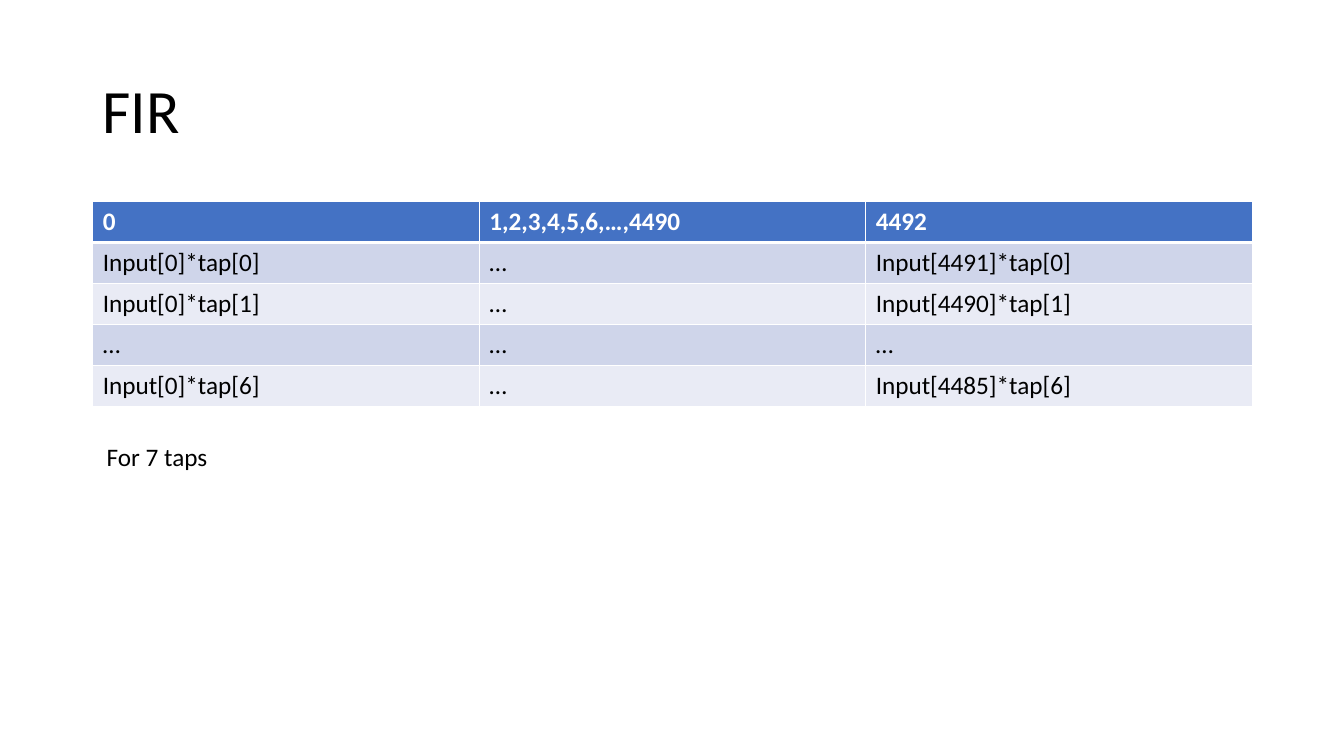
from dataclasses import dataclass

from lxml.etree import SubElement
from pptx import Presentation
from pptx.dml.color import RGBColor as RGB
from pptx.enum.text import MSO_ANCHOR as Anchor
from pptx.oxml.ns import qn
from pptx.util import Inches, Pt


@dataclass(frozen=True)
class Theme:
    font: str = "Calibri"
    title_size: int = 44
    body_size: int = 18
    ink: str = "000000"
    white: str = "FFFFFF"
    header: str = "4472C4"
    bands: tuple = ("CFD5EA", "E9EBF5")
    grid_line: int = 1
    header_line: int = 3


THEME = Theme()


def style_text(frame, size, color, bold=False):
    for paragraph in frame.paragraphs:
        for run in paragraph.runs:
            run.font.name = THEME.font
            run.font.size = Pt(size)
            run.font.bold = bold
            run.font.color.rgb = RGB.from_string(color)


def add_border(cell, side, points):
    """Draw one white cell edge; side is L, R, T or B."""
    line = SubElement(cell._tc.get_or_add_tcPr(), qn(f"a:ln{side}"), w=str(Pt(points)))
    fill = SubElement(line, qn("a:solidFill"))
    SubElement(fill, qn("a:srgbClr"), val=THEME.white)


prs = Presentation()
prs.slide_width = Inches(13.33)
prs.slide_height = Inches(7.5)
slide = prs.slides.add_slide(prs.slide_layouts[6])

title = slide.shapes.add_textbox(
    Inches(0.92), Inches(0.4), Inches(11.5), Inches(1.45)
).text_frame
title.word_wrap = True
title.vertical_anchor = Anchor.MIDDLE
title.text = "FIR"
title.paragraphs[0].line_spacing = 0.9
style_text(title, THEME.title_size, THEME.ink)

fir_rows = [
    ("0", "1,2,3,4,5,6,…,4490", "4492"),
    ("Input[0]*tap[0]", "…", "Input[4491]*tap[0]"),
    ("Input[0]*tap[1]", "…", "Input[4490]*tap[1]"),
    ("…", "…", "…"),
    ("Input[0]*tap[6]", "…", "Input[4485]*tap[6]"),
]
fir_table = slide.shapes.add_table(
    len(fir_rows), len(fir_rows[0]),
    Inches(0.92), Inches(2), Inches(11.5), Inches(2.03),
).table

for row, values in enumerate(fir_rows):
    is_header = row == 0
    band = THEME.header if is_header else THEME.bands[(row - 1) % 2]
    top = THEME.header_line if row == 1 else THEME.grid_line
    bottom = THEME.header_line if is_header else THEME.grid_line
    edges = {"L": THEME.grid_line, "R": THEME.grid_line, "T": top, "B": bottom}
    for column, value in enumerate(values):
        cell = fir_table.cell(row, column)
        cell.text_frame.text = value
        style_text(cell.text_frame, THEME.body_size,
                   THEME.white if is_header else THEME.ink, is_header)
        for side, points in edges.items():
            add_border(cell, side, points)
        cell.fill.solid()
        cell.fill.fore_color.rgb = RGB.from_string(band)

tap_note = slide.shapes.add_textbox(
    Inches(0.96), Inches(4.33), Inches(1.91), Inches(0.4)
).text_frame
tap_note.word_wrap = True
tap_note.text = "For 7 taps"
style_text(tap_note, THEME.body_size, THEME.ink)

prs.save("out.pptx")
